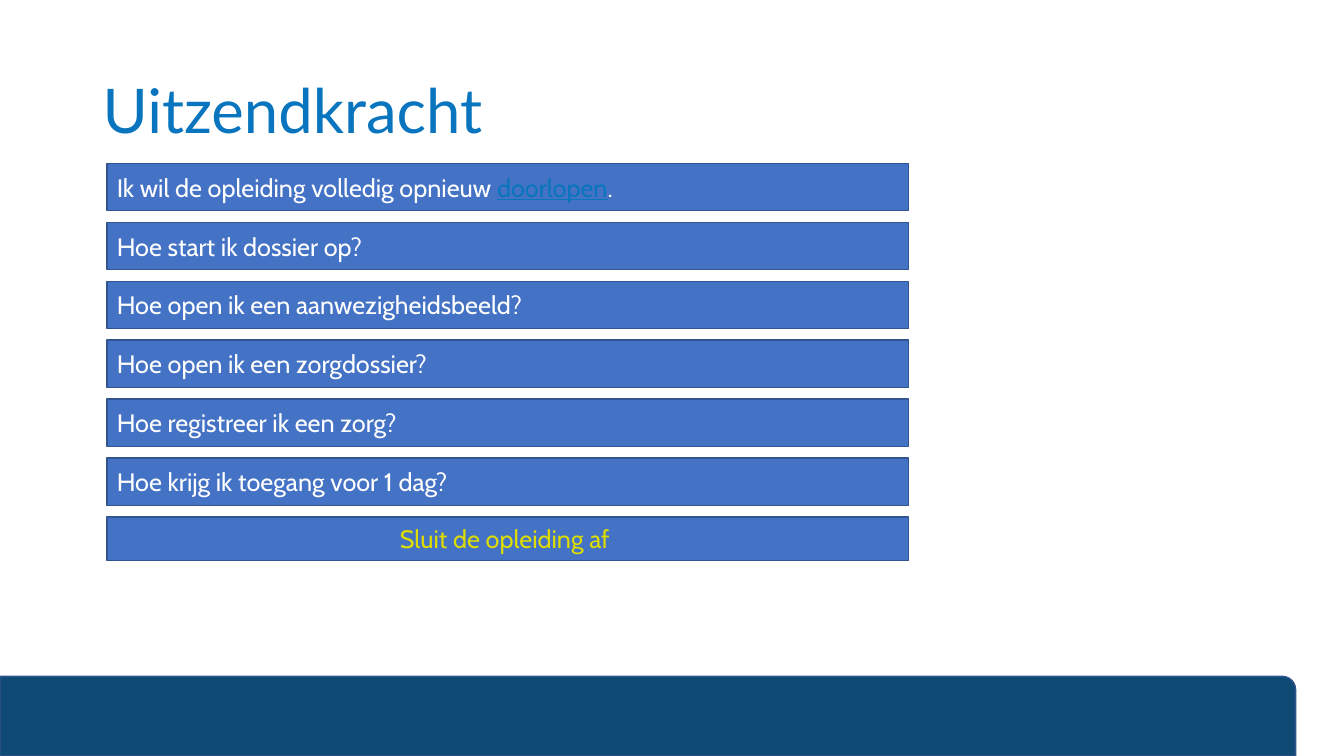
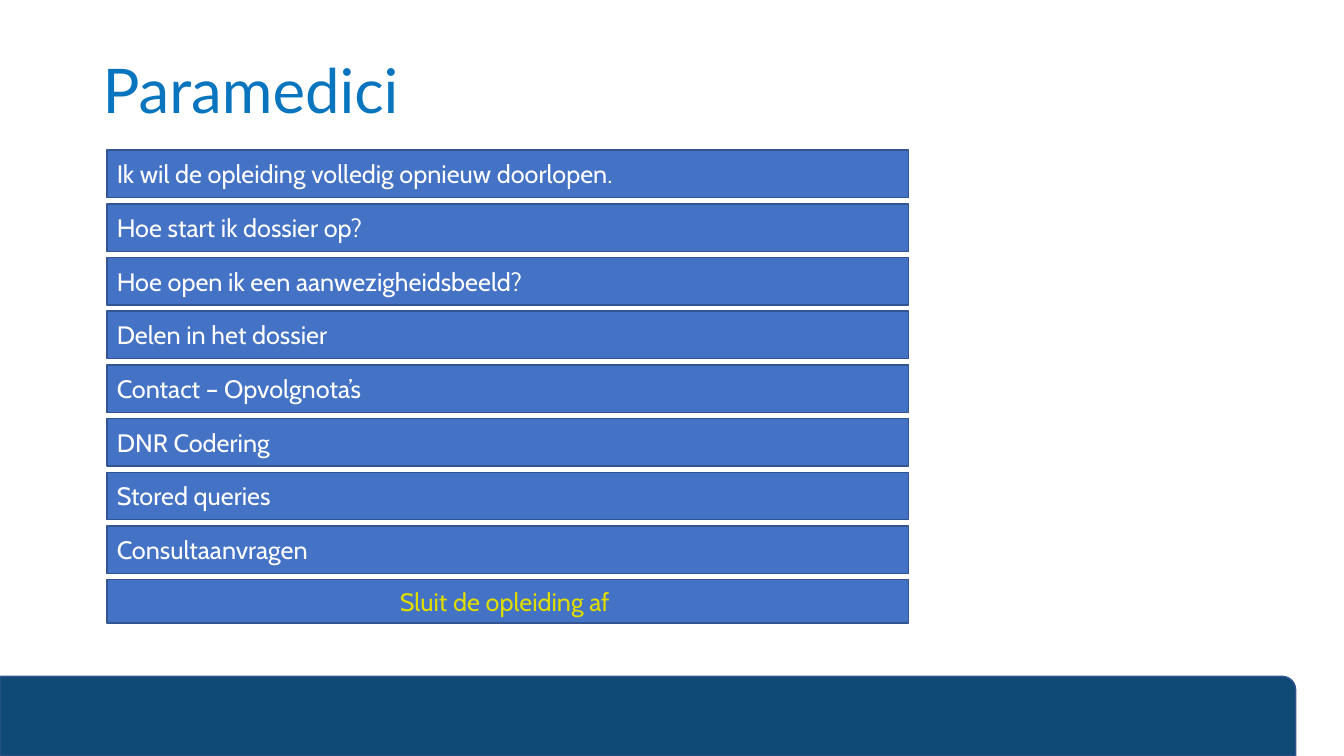
"""Build two menu slides with stacked buttons."""
from pptx import Presentation
from pptx.dml.color import RGBColor
from pptx.enum.shapes import MSO_SHAPE as Shape
from pptx.enum.text import MSO_ANCHOR as Anchor, PP_ALIGN as Align
from pptx.util import Inches, Pt

COLORS = {"band": "0E4A73", "title": "0875BE", "button": "4472C4",
          "edge": "325491", "white": "FFFFFF", "close": "DEDC00"}
TITLE = {"name": "Lato", "size": Pt(44)}
LABEL = {"name": "Cabin", "size": Pt(18)}
LINK = {**LABEL, "underline": True}
BUTTON_LEFT, BUTTON_WIDTH = 1.06, 7.95
BUTTON_HEIGHT, CLOSE_HEIGHT = 0.47, 0.43
CLOSE_TEXT = "Sluit de opleiding af "

SLIDES = [
    {"title": "Uitzendkracht", "title_height": 1.45, "top": 1.62, "close_top": 5.13,
     "buttons": [
         [("Ik wil de opleiding volledig opnieuw ", "white", LABEL),
          ("doorlopen", "title", LINK), (".", "white", LABEL)],
         "Hoe start ik dossier op?",
         "Hoe open ik een aanwezigheidsbeeld?",
         "Hoe open ik een zorgdossier?",
         "Hoe registreer ik een zorg?",
         "Hoe krijg ik toegang voor 1 dag?"]},
    {"title": "Paramedici", "title_height": 1.06, "top": 1.49, "close_top": 5.75,
     "buttons": [
         "Ik wil de opleiding volledig opnieuw doorlopen.",
         "Hoe start ik dossier op?",
         "Hoe open ik een aanwezigheidsbeeld?",
         "Delen in het dossier",
         "Contact – Opvolgnota’s",
         "DNR Codering",
         "Stored queries",
         "Consultaanvragen"]},
]


def rgb(name):
    return RGBColor.from_string(COLORS[name])


def add_box(s, kind, box, fill):
    sp = s.shapes.add_shape(kind, *map(Inches, box))
    sp.shadow.inherit = False
    sp.fill.solid()
    sp.fill.fore_color.rgb = rgb(fill)
    sp.line.color.rgb = rgb("edge")
    sp.line.width = Pt(1)
    return sp


def write(sp, runs, align=Align.LEFT):
    tf = sp.text_frame
    tf.word_wrap = True
    tf.vertical_anchor = Anchor.MIDDLE
    p = tf.paragraphs[0]
    p.alignment = align
    for text, color, style in runs:
        r = p.add_run()
        r.text = text
        for key, value in style.items():
            setattr(r.font, key, value)
        r.font.color.rgb = rgb(color)
    return p


def add_button(s, top, height, runs, align=Align.LEFT):
    box = (BUTTON_LEFT, top, BUTTON_WIDTH, height)
    write(add_box(s, Shape.ACTION_BUTTON_CUSTOM, box, "button"), runs, align)


def add_menu_slide(prs, content):
    s = prs.slides.add_slide(prs.slide_layouts[6])
    add_box(s, Shape.ROUND_1_RECTANGLE, (0, 6.71, 12.85, 0.79), "band")
    box = (0.92, 0.4, 11.5, content["title_height"])
    title = s.shapes.add_textbox(*map(Inches, box))
    write(title, [(content["title"], "title", TITLE)]).line_spacing = 0.9

    buttons, top = content["buttons"], content["top"]
    pitch = (content["close_top"] - top) / len(buttons)
    for i, label in enumerate(buttons):
        runs = [(label, "white", LABEL)] if isinstance(label, str) else label
        add_button(s, top + i * pitch, BUTTON_HEIGHT, runs)
    add_button(s, content["close_top"], CLOSE_HEIGHT,
               [(CLOSE_TEXT, "close", LABEL)], Align.CENTER)


def main():
    prs = Presentation()
    prs.slide_width, prs.slide_height = Inches(13.33), Inches(7.5)
    for content in SLIDES:
        add_menu_slide(prs, content)
    prs.save("out.pptx")


if __name__ == "__main__":
    main()
